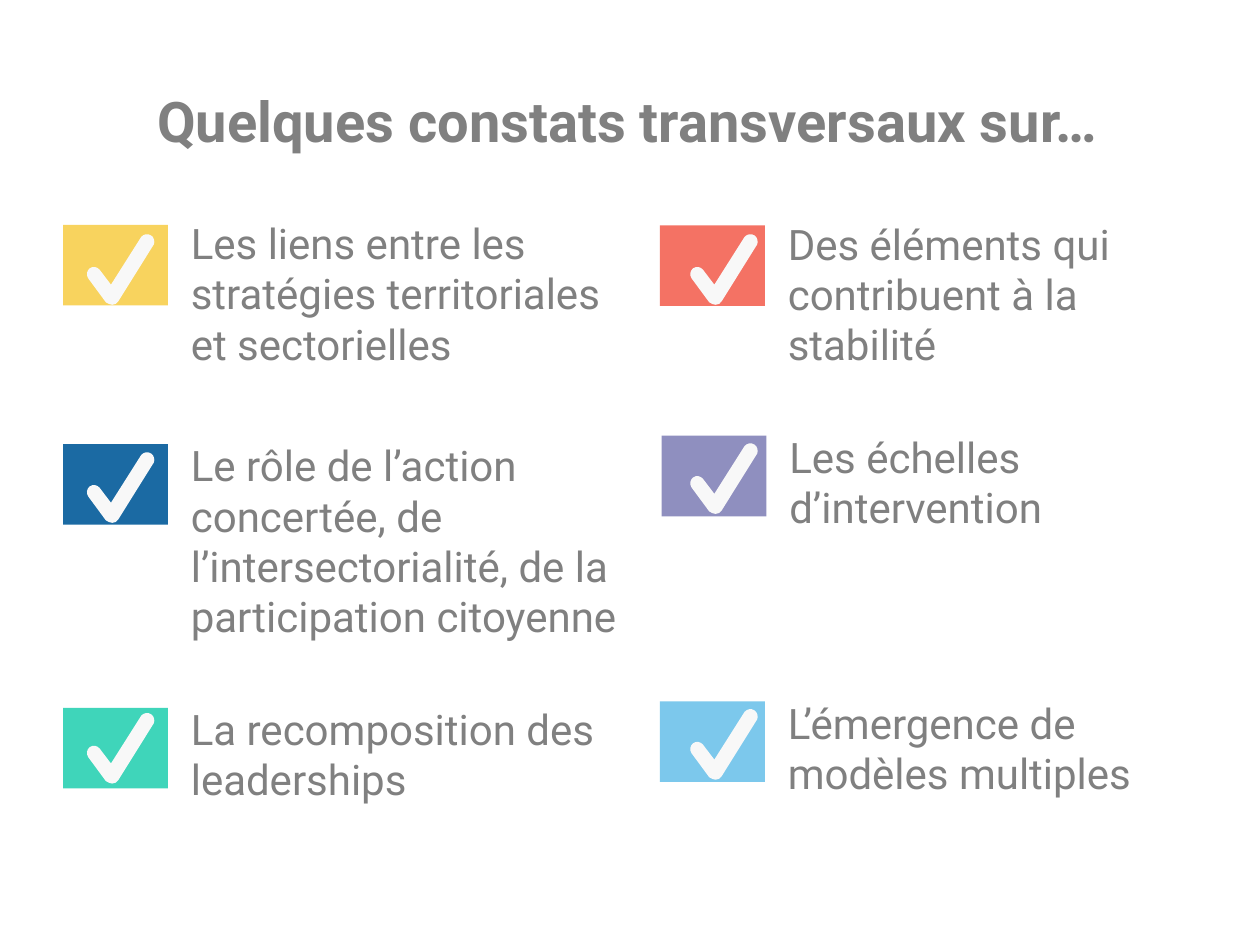
from lxml.etree import SubElement
from pptx import Presentation
from pptx.dml.color import RGBColor
from pptx.enum.shapes import MSO_SHAPE
from pptx.enum.text import MSO_ANCHOR, MSO_AUTO_SIZE, PP_ALIGN
from pptx.oxml.ns import qn
from pptx.util import Pt

GREY = RGBColor(0x80, 0x80, 0x80)
OFF_WHITE = RGBColor(0xF8, 0xF8, 0xF8)
YELLOW = RGBColor(0xF8, 0xD3, 0x5E)
BLUE = RGBColor(0x1B, 0x6A, 0xA3)
GREEN = RGBColor(0x3F, 0xD5, 0xBA)
RED = RGBColor(0xF4, 0x72, 0x64)
PURPLE = RGBColor(0x8F, 0x8F, 0xBF)
SKY = RGBColor(0x7C, 0xC8, 0xEC)

TILE_WIDTH, TILE_HEIGHT = 60, 46.1
LABEL_SHIFT = 66
LINE_HEIGHT, LABEL_PADDING = 29.1, 7.2
SCALE = 100

CHECK_START = (15.1, 41)
CHECK_CURVES = [
    [(13.7, 41), (13, 40.3), (11.5, 39.6)],
    [(1.4, 25.9)] * 3,
    [(0, 23.8), (0.7, 21.6), (2.2, 20.2)],
    [(4.3, 18.7), (6.5, 19.4), (7.9, 20.9)],
    [(14.4, 29.5)] * 3,
    [(31.7, 2.2)] * 3,
    [(33.1, 0.7), (35.3, 0), (37.4, 1.4)],
    [(38.9, 2.2), (39.6, 5), (38.9, 6.5)],
    [(18.7, 38.9)] * 3,
    [(18, 40.3), (16.6, 41), (15.1, 41)],
]

FINDINGS = [
    (36, 128.5, 120.8, 258, 3, YELLOW,
     "Les liens entre les stratégies territoriales et sectorielles"),
    (36, 253.8, 247.7, 258, 4, BLUE,
     "Le rôle de l’action concertée, de l’intersectorialité, de la participation citoyenne"),
    (36, 404.5, 398.4, 258, 2, GREEN,
     "La recomposition des leaderships"),
    (378, 249, 242.9, 222, 2, PURPLE,
     "Les échelles d’intervention"),
    (377.1, 400.8, 394.8, 222, 2, SKY,
     "L’émergence de modèles multiples"),
    (377.1, 128.8, 121.1, 247, 3, RED,
     "Des éléments qui contribuent à la stabilité"),
]

CHECKS = [
    (49, (133.2, 257.8, 406.8)),
    (393.8, (133.2, 252.7, 404.6)),
]


def add_text(shapes, text, left, top, width, height, size=24, bold=False,
             align=PP_ALIGN.LEFT, anchor=MSO_ANCHOR.TOP, fit=MSO_AUTO_SIZE.NONE):
    frame = shapes.add_textbox(Pt(left), Pt(top), Pt(width), Pt(height)).text_frame
    frame.word_wrap = True
    frame.auto_size = fit
    frame.vertical_anchor = anchor
    paragraph = frame.paragraphs[0]
    paragraph.alignment = align
    run = paragraph.add_run()
    run.text = text
    run.font.name = "Roboto"
    run.font.size = Pt(size)
    run.font.bold = bold
    run.font.color.rgb = GREY


def paint(shape, color):
    shape.shadow.inherit = False
    shape.fill.solid()
    shape.fill.fore_color.rgb = color
    shape.line.fill.background()


def scaled(point):
    return tuple(round(SCALE * value) for value in point)


def bend_segments(shape):
    path = next(shape._element.iter(qn("a:path")))
    segments = path.findall(qn("a:lnTo"))
    for first in range(0, len(segments), 3):
        curve = SubElement(path, qn("a:cubicBezTo"))
        segments[first].addprevious(curve)
        for segment in segments[first:first + 3]:
            curve.append(segment[0])
            path.remove(segment)


def add_check(slide, left, top):
    builder = slide.shapes.build_freeform(*scaled(CHECK_START), scale=Pt(1) / SCALE)
    points = [scaled(point) for curve in CHECK_CURVES for point in curve]
    builder.add_line_segments(points, close=True)
    check = builder.convert_to_shape(Pt(left), Pt(top))
    bend_segments(check)
    paint(check, OFF_WHITE)


def add_finding(slide, left, top, label_top, label_width, lines, color, label):
    shapes = slide.shapes.add_group_shape().shapes
    tile = shapes.add_shape(MSO_SHAPE.RECTANGLE, Pt(left), Pt(top),
                            Pt(TILE_WIDTH), Pt(TILE_HEIGHT))
    paint(tile, color)
    add_text(shapes, label, left + LABEL_SHIFT, label_top, label_width,
             lines * LINE_HEIGHT + LABEL_PADDING, fit=MSO_AUTO_SIZE.SHAPE_TO_FIT_TEXT)


def add_title(slide, left, top, width, height):
    add_text(slide.shapes, "Quelques constats transversaux sur…", left, top, width, height,
             size=32, bold=True, align=PP_ALIGN.CENTER, anchor=MSO_ANCHOR.MIDDLE)


def main():
    presentation = Presentation()
    presentation.slide_width = Pt(720)
    presentation.slide_height = Pt(540)
    slide = presentation.slides.add_slide(presentation.slide_layouts[6])
    for finding in FINDINGS:
        add_finding(slide, *finding)
    add_title(slide, 34.8, 54, 648, 28.8)
    for left, tops in CHECKS:
        for top in tops:
            add_check(slide, left, top)
    presentation.save("out.pptx")


if __name__ == "__main__":
    main()
